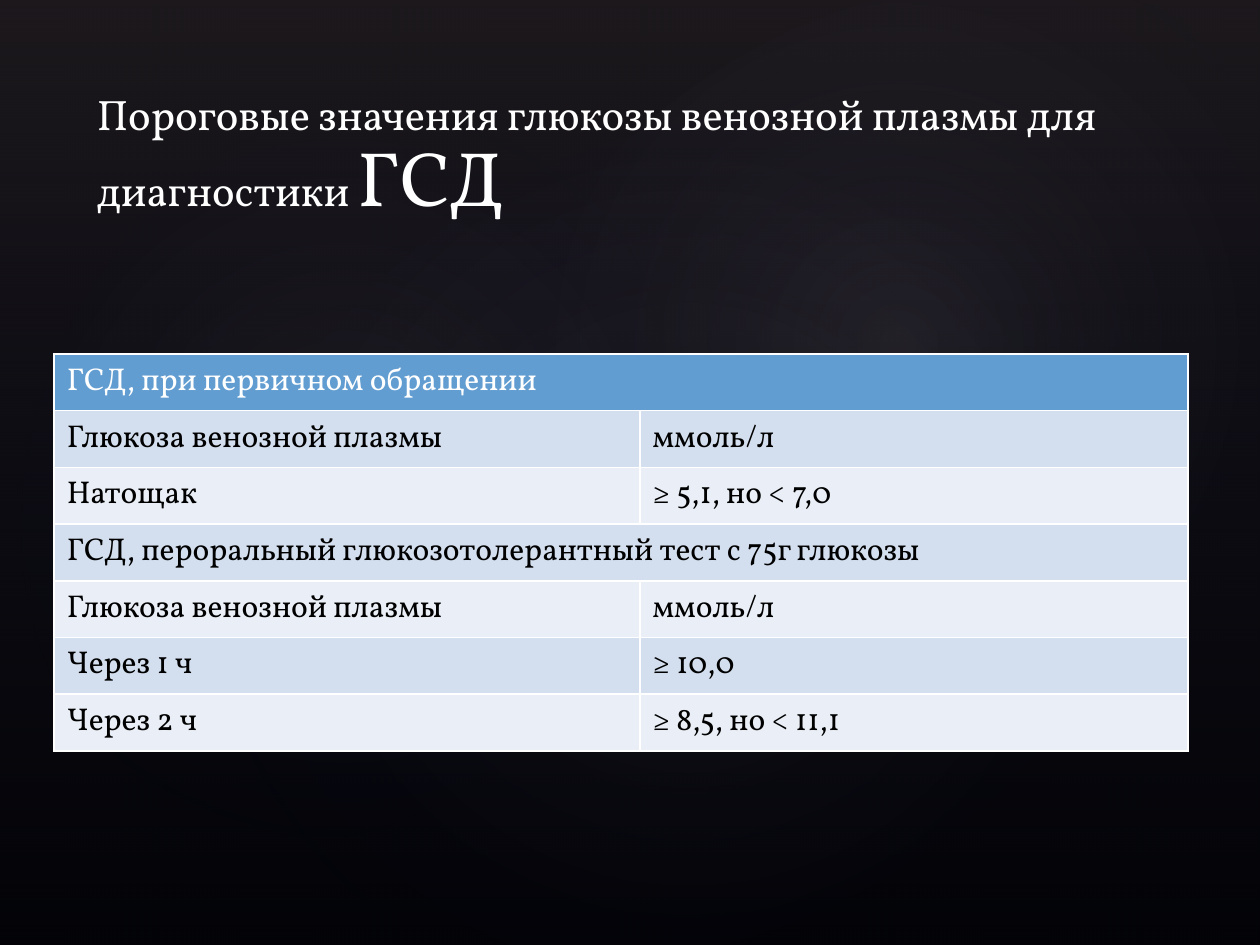
import pptx
import pptx.util
import pptx.dml.color
import pptx.enum.shapes
import pptx.enum.text
import pptx.oxml
import pptx.oxml.ns

TITLE = [("Пороговые значения глюкозы венозной плазмы для диагностики ", "title"),
         ("ГСД", "accent")]
ROWS = [
    ("ГСД, при первичном обращении",),
    ("Глюкоза венозной плазмы", "ммоль/л"),
    ("Натощак", "≥ 5,1, но < 7,0"),
    ("ГСД, пероральный глюкозотолерантный тест с 75г глюкозы",),
    ("Глюкоза венозной плазмы", "ммоль/л"),
    ("Через 1 ч", "≥ 10,0"),
    ("Через 2 ч", "≥ 8,5, но < 11,1"),
]
THEME = {
    "font": "Vollkorn", "title": 24.3, "accent": 44.1, "cell": 18, "border": 1,
    "back": "000000", "light": "FFFFFF", "dark": "000000",
    "head": "629DD1", "bands": ("EAEFF7", "D3DFEE"),
    "veil": [(0, "504652", 36), (100, "242852", 10)],
}
GLOWS = [
    ((1.5, 1.14, 7.92, 6.24), 328.7, 7),
    ((-0.3, 1.28, 6.06, 4.9), 294.3, 8),
    ((3.58, 0.13, 7.09, 5.2), 328.7, 8),
]
W, H = 10, 7.5
TITLE_BOX = (0.67, 0.6, 0.9 * W, 1.17)
TABLE_LEFT, TABLE_TOP, ROW_H = 0.43, 2.81, 0.45
COLS = (4.65, 4.35)

NS = pptx.oxml.ns.nsdecls("a")
LINEAR = '<a:lin ang="5400000" scaled="0"/>'
RADIAL = ('<a:path path="circle"><a:fillToRect l="50000" t="50000" '
          'r="50000" b="50000"/></a:path>')


def rgb(code):
    return pptx.dml.color.RGBColor.from_string(code)


def inches(values):
    return [pptx.util.Inches(v) for v in values]


def add_run(p, text, size, color):
    r = p.add_run()
    r.text = text
    r.font.name = THEME["font"]
    r.font.size = pptx.util.Pt(size)
    r.font.color.rgb = rgb(color)


def add_gradient(s, kind, box, stops, direction, rotation=0):
    sp = s.shapes.add_shape(kind, *inches(box))
    sp.rotation = rotation
    sp.shadow.inherit = False
    sp.line.fill.background()
    marks = "".join(
        f'<a:gs pos="{pos * 1000}"><a:srgbClr val="{color}">'
        f'<a:alpha val="{alpha * 1000}"/></a:srgbClr></a:gs>'
        for pos, color, alpha in stops)
    fill = pptx.oxml.parse_xml(
        f'<a:gradFill {NS} rotWithShape="1"><a:gsLst>{marks}</a:gsLst>{direction}</a:gradFill>')
    sp.element.spPr.find(pptx.oxml.ns.qn("a:prstGeom")).addnext(fill)


def add_borders(cell):
    props = cell._tc.get_or_add_tcPr()
    width = pptx.util.Pt(THEME["border"])
    for i, side in enumerate(("lnL", "lnR", "lnT", "lnB")):
        props.insert(i, pptx.oxml.parse_xml(
            f'<a:{side} {NS} w="{width}"><a:solidFill>'
            f'<a:srgbClr val="{THEME["light"]}"/></a:solidFill></a:{side}>'))


def add_title(s):
    tf = s.shapes.add_textbox(*inches(TITLE_BOX)).text_frame
    tf.word_wrap = True
    tf.margin_bottom = 0
    tf.vertical_anchor = pptx.enum.text.MSO_ANCHOR.BOTTOM
    p = tf.paragraphs[0]
    p.line_spacing = 0.9
    for text, style in TITLE:
        add_run(p, text, THEME[style], THEME["light"])


def add_table(s):
    box = (TABLE_LEFT, TABLE_TOP, sum(COLS), ROW_H * len(ROWS))
    table = s.shapes.add_table(len(ROWS), len(COLS), *inches(box)).table
    for column, width in zip(table.columns, inches(COLS)):
        column.width = width
    for i, row in enumerate(ROWS):
        if len(row) == 1:
            table.cell(i, 0).merge(table.cell(i, len(COLS) - 1))
        for j in range(len(COLS)):
            cell = table.cell(i, j)
            cell.fill.solid()
            cell.fill.fore_color.rgb = rgb(THEME["bands"][i % 2] if i else THEME["head"])
            add_borders(cell)
        for j, text in enumerate(row):
            add_run(table.cell(i, j).text_frame.paragraphs[0], text,
                    THEME["cell"], THEME["dark"] if i else THEME["light"])


def main():
    prs = pptx.Presentation()
    prs.slide_width, prs.slide_height = inches((W, H))
    s = prs.slides.add_slide(prs.slide_layouts[6])
    s.background.fill.solid()
    s.background.fill.fore_color.rgb = rgb(THEME["back"])
    shapes = pptx.enum.shapes.MSO_SHAPE
    add_gradient(s, shapes.RECTANGLE, (0, 0, W, H), THEME["veil"], LINEAR)
    for box, rotation, alpha in GLOWS:
        stops = [(0, "C4BCC6", alpha), (58, "242852", 0)]
        add_gradient(s, shapes.OVAL, box, stops, RADIAL, rotation)
    add_title(s)
    add_table(s)
    prs.save("out.pptx")


if __name__ == "__main__":
    main()
